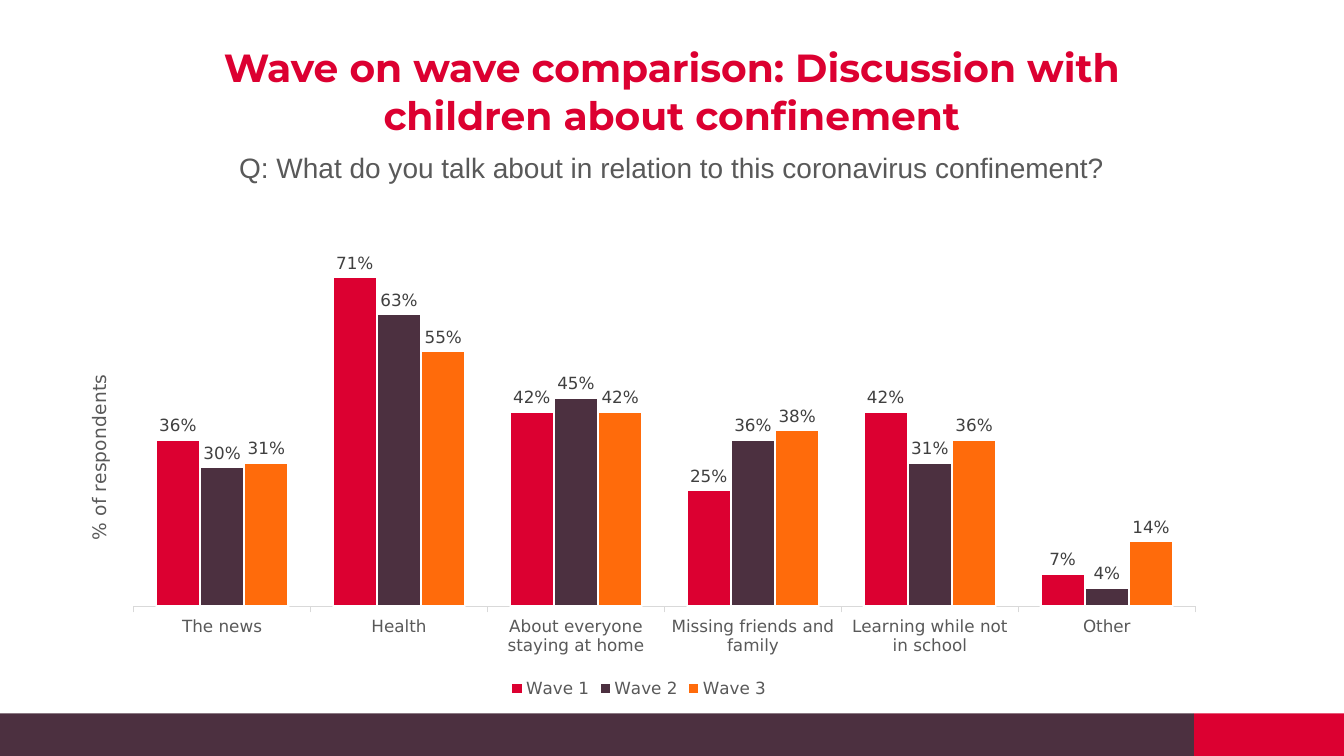
from lxml import etree
from pptx import Presentation
from pptx import util as u
from pptx.chart import data
from pptx.dml import color
from pptx.enum import chart as ch
from pptx.enum import shapes, text
from pptx.oxml import ns

COLORS = {
    "red": "DC0031",
    "plum": "4C3040",
    "orange": "FF6B0B",
    "grey": "595959",
    "label": "404040",
    "axis": "D9D9D9",
    "white": "FFFFFF",
}
CHART_FONT = "DejaVu Sans"
PERCENT = "###0%"
WIDTH, HEIGHT = 33.87, 19.05
FOOTER_TOP, FOOTER_SPLIT = 17.98, 30.09

TOPICS = [
    "The news",
    "Health",
    "About everyone staying at home",
    "Missing friends and family",
    "Learning while not in school",
    "Other",
]
WAVES = [
    ("Wave 1", "red", (0.36, 0.71, 0.42, 0.25, 0.42, 0.07)),
    ("Wave 2", "plum", (0.30, 0.63, 0.45, 0.36, 0.31, 0.04)),
    ("Wave 3", "orange", (0.31, 0.55, 0.42, 0.38, 0.36, 0.14)),
]


def rgb(name):
    return color.RGBColor.from_string(COLORS[name])


def box(left, top, width, height):
    return [u.Cm(n) for n in (left, top, width, height)]


def style_font(font, name, size, fill, bold=False):
    font.name = name
    font.size = u.Pt(size)
    font.bold = bold
    font.color.rgb = rgb(fill)


def add_bar(s, left, width, fill):
    sp = s.shapes.add_shape(
        shapes.MSO_SHAPE.RECTANGLE, *box(left, FOOTER_TOP, width, HEIGHT - FOOTER_TOP)
    )
    sp.shadow.inherit = False
    sp.fill.solid()
    sp.fill.fore_color.rgb = rgb(fill)
    sp.line.fill.background()


def add_text(s, area, words, name, size, fill, bold=False):
    tf = s.shapes.add_textbox(*box(*area)).text_frame
    tf.word_wrap = True
    p = tf.paragraphs[0]
    p.alignment = text.PP_ALIGN.CENTER
    r = p.add_run()
    r.text = words
    style_font(r.font, name, size, fill, bold)
    return tf


def set_layout(parent, **places):
    layout = parent.find(ns.qn("c:layout"))
    if layout is None:
        layout = etree.Element(ns.qn("c:layout"))
        before = parent.find(ns.qn("c:tx"))
        parent.insert(0 if before is None else parent.index(before) + 1, layout)
    for child in list(layout):
        layout.remove(child)
    manual = etree.SubElement(layout, ns.qn("c:manualLayout"))
    for tag, value in places.items():
        etree.SubElement(manual, ns.qn("c:" + tag)).set("val", str(value))


def style_series(series, fill):
    series.format.fill.solid()
    series.format.fill.fore_color.rgb = rgb(fill)
    series.format.line.color.rgb = rgb("white")
    series.format.line.width = u.Pt(1.5)
    labels = series.data_labels
    labels.show_value = True
    labels.position = ch.XL_LABEL_POSITION.OUTSIDE_END
    labels.number_format = PERCENT
    labels.number_format_is_linked = False
    style_font(labels.font, CHART_FONT, 12, "label")


def style_axes(chart):
    topics = chart.category_axis
    topics.major_tick_mark = ch.XL_TICK_MARK.OUTSIDE
    topics.format.line.color.rgb = rgb("axis")
    topics.format.line.width = u.Pt(0.75)
    style_font(topics.tick_labels.font, CHART_FONT, 12, "grey")

    share = chart.value_axis
    share.minimum_scale, share.maximum_scale = 0, 0.8
    share.has_major_gridlines = False
    share.tick_labels.number_format = PERCENT
    share.tick_labels.number_format_is_linked = False
    share.visible = False
    tf = share.axis_title.text_frame
    r = tf.paragraphs[0].add_run()
    r.text = "% of respondents"
    style_font(r.font, CHART_FONT, 13.3, "grey")
    body = tf._txBody.find(ns.qn("a:bodyPr"))
    body.set("rot", "-5400000")
    body.set("vert", "horz")
    set_layout(share.axis_title._element, xMode="edge", yMode="edge", x=0.02, y=0.31)


def add_wave_chart(s, area):
    chart_data = data.CategoryChartData(number_format=PERCENT)
    chart_data.categories = TOPICS
    for name, _, values in WAVES:
        chart_data.add_series(name, values)
    chart = s.shapes.add_chart(
        ch.XL_CHART_TYPE.COLUMN_CLUSTERED, *box(*area), chart_data
    ).chart
    chart.has_title = False
    style_font(chart.font, CHART_FONT, 10, "grey")
    plot = chart.plots[0]
    plot.gap_width = 100
    plot.overlap = 0
    plot.vary_by_categories = False
    for series, (_, fill, _) in zip(plot.series, WAVES):
        style_series(series, fill)
    style_axes(chart)
    chart.has_legend = True
    chart.legend.position = ch.XL_LEGEND_POSITION.BOTTOM
    chart.legend.include_in_layout = False
    style_font(chart.legend.font, CHART_FONT, 12, "grey")
    set_layout(
        chart._chartSpace.chart.plotArea,
        layoutTarget="inner", xMode="edge", yMode="edge",
        x=0.064, y=0.027, w=0.916, h=0.773,
    )


def main():
    prs = Presentation()
    prs.slide_width, prs.slide_height = u.Cm(WIDTH), u.Cm(HEIGHT)
    s = prs.slides.add_slide(prs.slide_layouts[6])
    add_bar(s, FOOTER_SPLIT, WIDTH - FOOTER_SPLIT, "red")
    add_bar(s, 0, FOOTER_SPLIT, "plum")
    tf = add_text(
        s, (3.15, 3.66, 27.56, 1.96),
        "Q: What do you talk about in relation to this coronavirus confinement?",
        "Arial", 20, "grey",
    )
    tf.auto_size = text.MSO_AUTO_SIZE.SHAPE_TO_FIT_TEXT
    add_wave_chart(s, (1.5, 5.61, 29.21, 12.09))
    tf = add_text(
        s, (4.6, 1.35, 24.66, 1.88),
        "Wave on wave comparison: Discussion with children about confinement",
        "Montserrat", 28, "red", True,
    )
    tf.vertical_anchor = text.MSO_ANCHOR.MIDDLE
    tf.margin_left = tf.margin_right = tf.margin_top = tf.margin_bottom = 0
    prs.save("out.pptx")


if __name__ == "__main__":
    main()
